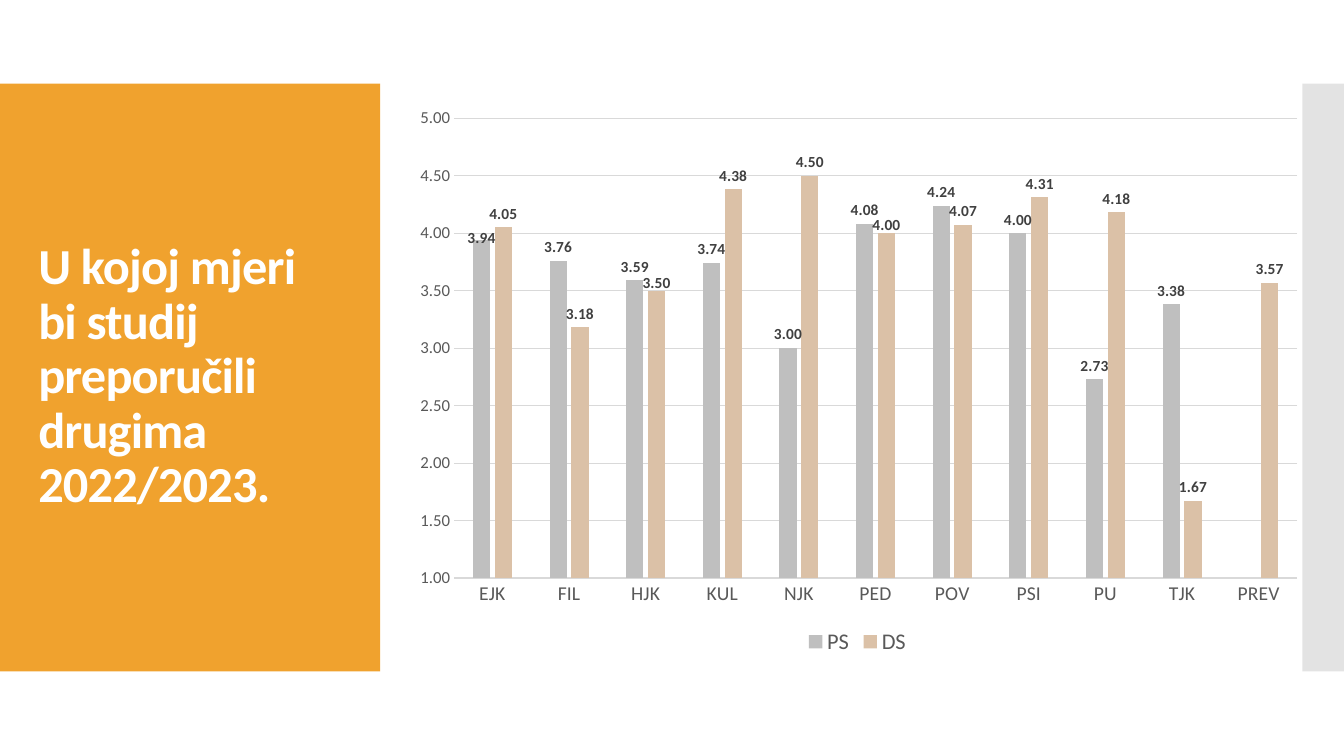
from lxml import etree
from pptx import Presentation
from pptx.chart.data import CategoryChartData
from pptx.dml.color import RGBColor
from pptx.enum.chart import XL_CHART_TYPE, XL_LABEL_POSITION, XL_LEGEND_POSITION, XL_TICK_MARK
from pptx.enum.shapes import MSO_SHAPE
from pptx.enum.text import MSO_ANCHOR, MSO_AUTO_SIZE, PP_ALIGN
from pptx.oxml.ns import qn
from pptx.util import Cm, Pt

COLUMN_CLUSTERED = XL_CHART_TYPE.COLUMN_CLUSTERED
OUTSIDE_END = XL_LABEL_POSITION.OUTSIDE_END
LEGEND_BOTTOM = XL_LEGEND_POSITION.BOTTOM
NO_TICK = XL_TICK_MARK.NONE
RECTANGLE = MSO_SHAPE.RECTANGLE
MIDDLE = MSO_ANCHOR.MIDDLE
NO_AUTOFIT = MSO_AUTO_SIZE.NONE
LEFT = PP_ALIGN.LEFT

WHITE = RGBColor(0xFF, 0xFF, 0xFF)
BLACK = RGBColor(0, 0, 0)
ORANGE = RGBColor(0xF0, 0xA2, 0x2E)
PANEL_GRAY = RGBColor(0xC8, 0xC8, 0xC8)
LINE_GRAY = RGBColor(0xD9, 0xD9, 0xD9)
AXIS_TEXT = RGBColor(0x59, 0x59, 0x59)
LABEL_TEXT = RGBColor(0x40, 0x40, 0x40)
BAR_GRAY = RGBColor(0xBF, 0xBF, 0xBF)
BAR_TAN = RGBColor(0xDB, 0xC1, 0xA7)

FONT = "Calibri"
NUMBER_FORMAT = "#,##0.00"
TITLE = "U kojoj mjeri bi studij preporučili drugima 2022/2023."
PROGRAMMES = ["EJK", "FIL", "HJK", "KUL", "NJK", "PED", "POV", "PSI", "PU", "TJK", "PREV"]
# Name, colour, values, and downward label shifts by point index
SERIES = [
    ("PS", BAR_GRAY,
     [3.94, 3.76, 3.59, 3.74, 3, 4.08, 4.24, 4, 2.73, 3.38, None], {0: 0.02}),
    ("DS", BAR_TAN,
     [4.05, 3.18, 3.5, 4.38, 4.5, 4, 4.07, 4.31, 4.18, 1.67, 3.57], {2: 0.01, 5: 0.01}),
]


def format_font(font, size, color, bold=False):
    font.name = FONT
    font.size = Pt(size)
    font.bold = bold
    font.color.rgb = color


def add_panel(slide, left, width, color, opacity=100):
    """Add a side panel with the shared top and height."""
    panel = slide.shapes.add_shape(RECTANGLE, Cm(left), Cm(2.11), Cm(width), Cm(14.81))
    panel.shadow.inherit = False
    panel.fill.solid()
    panel.fill.fore_color.rgb = color
    panel.line.fill.background()
    if opacity < 100:
        color_element = panel.fill._xPr.find(qn("a:solidFill"))[0]
        etree.SubElement(color_element, qn("a:alpha"), val=str(opacity * 1000))


def set_title(slide):
    title = slide.shapes.title
    title.left, title.top, title.width, title.height = Cm(0.71), Cm(3.12), Cm(8.18), Cm(12.78)
    frame = title.text_frame
    frame.text = TITLE
    frame.word_wrap = True
    frame.auto_size = NO_AUTOFIT
    frame.vertical_anchor = MIDDLE
    paragraph = frame.paragraphs[0]
    paragraph.alignment = LEFT
    paragraph.line_spacing = 0.9
    run = paragraph.runs[0]
    format_font(run.font, 36, WHITE, bold=True)
    run.font._element.set("spc", "-60")


def make_layout(**settings):
    """Return a manual chart layout; keyword order follows the schema."""
    layout = etree.Element(qn("c:layout"))
    manual = etree.SubElement(layout, qn("c:manualLayout"))
    for name, value in settings.items():
        etree.SubElement(manual, qn(f"c:{name}"), val=str(value))
    return layout


def set_plot_area(chart):
    plot_area = chart._chartSpace.chart.plotArea
    for layout in plot_area.findall(qn("c:layout")):
        plot_area.remove(layout)
    plot_area.insert(0, make_layout(layoutTarget="inner", xMode="edge", yMode="edge",
                                    x=0.06, y=0.04, w=0.92, h=0.815))


def shift_label(point, offset):
    label = point.data_label
    format_font(label.font, 11, LABEL_TEXT, bold=True)
    label.position = OUTSIDE_END
    element = label._get_or_add_dLbl()
    number_format = etree.Element(qn("c:numFmt"), formatCode=NUMBER_FORMAT, sourceLinked="0")
    element.insert(1, make_layout(x=0, y=offset))
    element.insert(2, number_format)


def format_series(series, color, label_shifts):
    series.format.fill.solid()
    series.format.fill.fore_color.rgb = color
    series.invert_if_negative = False
    labels = series.data_labels
    labels.show_value = True
    labels.number_format = NUMBER_FORMAT
    labels.number_format_is_linked = False
    labels.position = OUTSIDE_END
    format_font(labels.font, 11, LABEL_TEXT, bold=True)
    for index, offset in label_shifts.items():
        shift_label(series.points[index], offset)


def format_line(line):
    line.color.rgb = LINE_GRAY
    line.width = Pt(0.75)


def format_axes(chart):
    for axis, size in ((chart.category_axis, 14), (chart.value_axis, 12)):
        axis.major_tick_mark = axis.minor_tick_mark = NO_TICK
        format_font(axis.tick_labels.font, size, AXIS_TEXT)
    format_line(chart.category_axis.format.line)
    value_axis = chart.value_axis
    value_axis.minimum_scale, value_axis.maximum_scale, value_axis.major_unit = 1, 5, 0.5
    value_axis.format.line.fill.background()
    format_line(value_axis.major_gridlines.format.line)
    value_axis.tick_labels.number_format = NUMBER_FORMAT
    value_axis.tick_labels.number_format_is_linked = False


def add_rating_chart(slide):
    data = CategoryChartData(number_format=NUMBER_FORMAT)
    data.categories = PROGRAMMES
    for name, _, values, _ in SERIES:
        data.add_series(name, values)
    chart = slide.shapes.add_chart(COLUMN_CLUSTERED, Cm(10.06), Cm(2.41),
                                   Cm(23.09), Cm(14.22), data).chart
    format_font(chart.font, 10, BLACK)
    chart.has_title = False
    chart.has_legend = True
    chart.legend.position = LEGEND_BOTTOM
    chart.legend.include_in_layout = False
    format_font(chart.legend.font, 16, AXIS_TEXT)
    plot = chart.plots[0]
    plot.gap_width = 219
    plot.overlap = -27
    plot.vary_by_categories = False
    for series, (_, color, _, label_shifts) in zip(plot.series, SERIES):
        format_series(series, color, label_shifts)
    format_axes(chart)
    set_plot_area(chart)


def main():
    presentation = Presentation()
    presentation.slide_width, presentation.slide_height = Cm(33.87), Cm(19.05)
    slide = presentation.slides.add_slide(presentation.slide_layouts[5])
    add_panel(slide, 0, 9.58, ORANGE)
    add_panel(slide, 32.82, 1.05, PANEL_GRAY, opacity=50)
    set_title(slide)
    title_element = slide.shapes.title._element
    title_element.getparent().append(title_element)
    add_rating_chart(slide)
    presentation.save("out.pptx")


if __name__ == "__main__":
    main()
